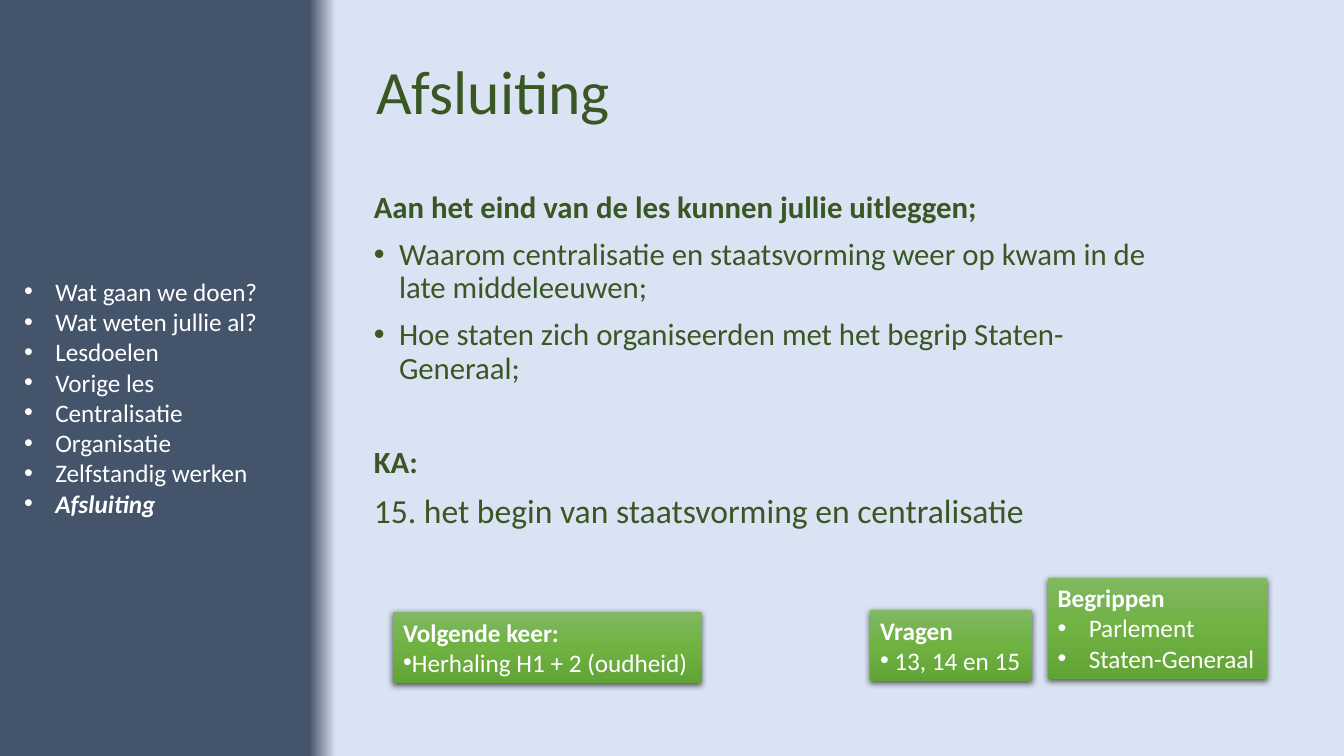
import pptx
import pptx.util
import pptx.dml.color
import pptx.enum.shapes
import pptx.enum.text
import pptx.oxml
import pptx.oxml.ns
from lxml import etree

PX = 9144  # EMU per px, 100 px to the inch
GREEN, WHITE = "385723", "FFFFFF"
PAGE_STOPS = [(23, "44546A"), (25, "DAE3F3")]
CARD_STOPS = [(0, "81B861"), (50, "6FB242"), (100, "62A336")]
AGENDA = ["Wat gaan we doen?", "Wat weten jullie al?", "Lesdoelen", "Vorige les",
          "Centralisatie", "Organisatie", "Zelfstandig werken", "Afsluiting"]
# Box, heading, bullet texts, bullet indent
CARDS = [
    ((390, 607, 306, 71), "Volgende keer:", ["Herhaling H1 + 2 (oudheid)"], 0),
    ((863, 605, 161, 71), "Vragen", [" 13, 14 en 15"], 0),
    ((1039, 573, 218, 101), "Begrippen", ["Parlement", "Staten-Generaal"], 31),
]


def color(value):
    return pptx.dml.color.RGBColor.from_string(value)


def px(*lengths):
    return [pptx.util.Emu(length * PX) for length in lengths]


def sub(parent, tag, **attrs):
    el = etree.SubElement(parent, pptx.oxml.ns.qn(tag))
    for name, value in attrs.items():
        el.set(name, str(value))
    return el


def set_gradient(fill, element, stops, angle):
    fill.gradient()
    fill.gradient_angle = -angle % 360
    gs_list = next(element.iter(pptx.oxml.ns.qn("a:gsLst")))
    for gs in list(gs_list):
        gs_list.remove(gs)
    for position, value in stops:
        sub(sub(gs_list, "a:gs", pos=position * 1000), "a:srgbClr", val=value)


def set_shadow(sp):
    sp.shadow.inherit = False
    effects = sp._element.spPr.find(pptx.oxml.ns.qn("a:effectLst"))
    shadow = sub(effects, "a:outerShdw", blurRad=57150, dist=19050,
                 dir=5400000, algn="ctr", rotWithShape=0)
    sub(sub(shadow, "a:srgbClr", val="000000"), "a:alpha", val=63000)


def format_paragraph(p, text, size, value, bold=False, italic=False):
    p.text = text
    p.alignment = pptx.enum.text.PP_ALIGN.LEFT
    font = p.font
    font.name, font.size = "Calibri", pptx.util.Pt(size)
    font.bold, font.italic = bold, italic
    font.color.rgb = color(value)


def add_bullet(p, indent):
    p_pr = p._p.get_or_add_pPr()
    p_pr.set("marL", str(indent * PX))
    p_pr.set("indent", str(-indent * PX))
    font = pptx.oxml.parse_xml(
        f'<a:buFont {pptx.oxml.ns.nsdecls("a")} typeface="Arial"/>')
    char = pptx.oxml.parse_xml(f'<a:buChar {pptx.oxml.ns.nsdecls("a")} char="•"/>')
    # Bullets stand before the default run properties
    run_defaults = p_pr.find(pptx.oxml.ns.qn("a:defRPr"))
    run_defaults.addprevious(font)
    run_defaults.addprevious(char)


def next_paragraph(tf, index):
    return tf.paragraphs[0] if index == 0 else tf.add_paragraph()


def add_title(slide, text):
    title = slide.shapes.title
    title.left, title.top, title.width, title.height = px(363, 21, 920, 145)
    tf = title.text_frame
    tf.vertical_anchor = pptx.enum.text.MSO_ANCHOR.MIDDLE
    p = tf.paragraphs[0]
    format_paragraph(p, text, 44, GREEN)
    p.line_spacing = 0.9


def add_agenda(slide):
    tf = slide.shapes.add_textbox(*px(14, 269, 264, 252)).text_frame
    tf.word_wrap = False
    for i, text in enumerate(AGENDA):
        p = next_paragraph(tf, i)
        current = text == AGENDA[-1]
        format_paragraph(p, text, 18, WHITE, bold=current, italic=current)
        add_bullet(p, 31)


def add_body(slide):
    tf = slide.shapes.add_textbox(*px(361, 185, 790, 359)).text_frame
    tf.word_wrap = True
    # Text, size, bold, bulleted, space before
    rows = [
        ("Aan het eind van de les kunnen jullie uitleggen;", 22, True, False, 10),
        ("Waarom centralisatie en staatsvorming weer op kwam in de late middeleeuwen;",
         22, False, True, 10),
        ("Hoe staten zich organiseerden met het begrip Staten-Generaal;",
         22, False, True, 10),
        ("KA:", 22, True, False, 44),
        ("15. het begin van staatsvorming en centralisatie", 24, False, False, 10),
    ]
    for i, (text, size, bold, bulleted, before) in enumerate(rows):
        p = next_paragraph(tf, i)
        format_paragraph(p, text, size, GREEN, bold)
        p.line_spacing = 0.9
        p.space_before = pptx.util.Pt(before)
        if bulleted:
            add_bullet(p, 25)


def add_card(slide, box, heading, items, indent):
    sp = slide.shapes.add_shape(pptx.enum.shapes.MSO_SHAPE.RECTANGLE, *px(*box))
    set_gradient(sp.fill, sp._element, CARD_STOPS, 90)
    sp.line.fill.background()
    set_shadow(sp)
    tf = sp.text_frame
    tf.word_wrap = False
    tf.vertical_anchor = pptx.enum.text.MSO_ANCHOR.TOP
    format_paragraph(tf.paragraphs[0], heading, 18, WHITE, bold=True)
    for text in items:
        p = tf.add_paragraph()
        format_paragraph(p, text, 18, WHITE)
        add_bullet(p, indent)


def main():
    prs = pptx.Presentation()
    prs.slide_width, prs.slide_height = px(1333, 750)
    slide = prs.slides.add_slide(prs.slide_layouts[5])

    # Dark side band and light page in one gradient
    set_gradient(slide.background.fill, slide._element, PAGE_STOPS, 0)

    # Texts
    add_title(slide, "Afsluiting")
    add_agenda(slide)
    add_body(slide)

    # Green cards
    for card in CARDS:
        add_card(slide, *card)

    prs.save("out.pptx")


if __name__ == "__main__":
    main()
